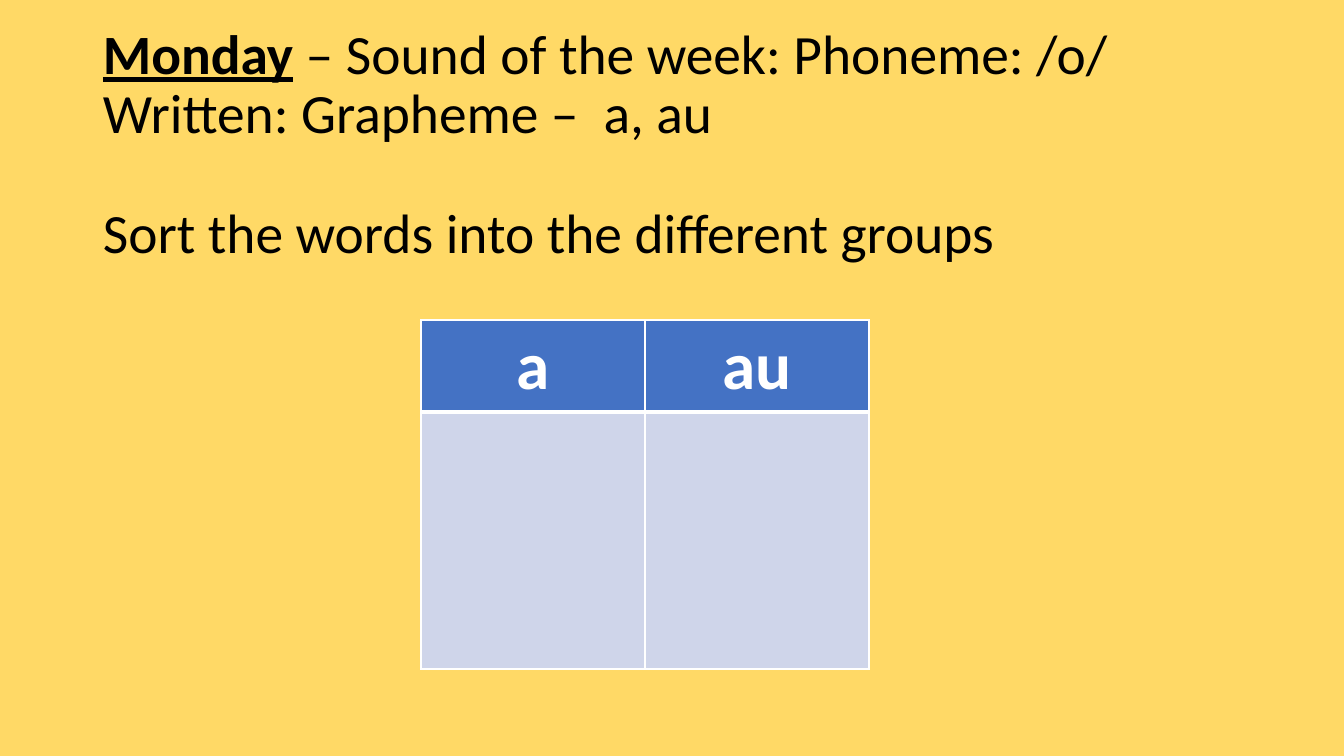
from lxml import etree
from pptx import Presentation, util as u
from pptx.dml.color import RGBColor
from pptx.enum import text
from pptx.oxml.ns import qn

PX = 9525 / 1.05
FONT = "Calibri"
COLORS = {"background": "FFD966", "ink": "000000", "white": "FFFFFF",
          "header": "4472C4", "body": "CFD5EA"}
GRAPHEMES = ["a", "au"]
HEADER_HEIGHT = 92


def px(length):
    """Turn px into EMU."""
    return u.Emu(round(length * PX))


def rgb(name):
    """Look up a named colour."""
    return RGBColor.from_string(COLORS[name])


def style_font(font, size, color, bold=False):
    """Set the face, size, colour and weight of a font."""
    font.name, font.size, font.bold = FONT, u.Pt(size), bold
    font.color.rgb = rgb(color)


def add_instructions(slide, left, top, width, height):
    """Place the phoneme heading and the task, centred vertically in the box."""
    frame = slide.shapes.add_textbox(*map(px, (left, top, width, height))).text_frame
    frame.word_wrap = True
    frame.vertical_anchor = text.MSO_ANCHOR.MIDDLE
    heading, task = frame.paragraphs[0], frame.add_paragraph()
    heading.text = "Monday"
    heading.add_run().text = " – Sound of the week: Phoneme: /o/"
    heading.add_line_break()
    heading.add_run().text = "Written: Grapheme –  a, au"
    heading.space_after = u.Pt(43)
    task.text = "Sort the words into the different groups"
    for paragraph in (heading, task):
        paragraph.line_spacing = 0.9
        style_font(paragraph.font, 39.6, "ink")
        for run in paragraph.runs:
            style_font(run.font, 39.6, "ink")
    day = heading.runs[0].font
    day.bold = day.underline = True


def style_cell(cell, fill, top_line, bottom_line):
    """Give a cell its fill and white borders."""
    properties = cell._tc.get_or_add_tcPr()
    for side, points in zip("LRTB", (1, 1, top_line, bottom_line)):
        line = etree.SubElement(properties, qn(f"a:ln{side}"), w=str(u.Pt(points)))
        solid = etree.SubElement(line, qn("a:solidFill"))
        etree.SubElement(solid, qn("a:srgbClr"), val=COLORS["white"])
    cell.fill.solid()
    cell.fill.fore_color.rgb = rgb(fill)


def add_sorting_table(slide, left, top, width, height):
    """Place a table with one empty column under each grapheme."""
    table = slide.shapes.add_table(
        2, len(GRAPHEMES), *map(px, (left, top, width, height))).table
    table.rows[0].height = px(HEADER_HEIGHT)
    table.rows[1].height = px(height - HEADER_HEIGHT)
    for column, grapheme in enumerate(GRAPHEMES):
        header = table.cell(0, column)
        header.text = grapheme
        label = header.text_frame.paragraphs[0]
        label.alignment = text.PP_ALIGN.CENTER
        style_font(label.runs[0].font, 48, "white", bold=True)
        style_cell(header, "header", 1, 3)
        style_cell(table.cell(1, column), "body", 3, 1)


def main():
    """Build the slide and save it."""
    deck = Presentation()
    deck.slide_width, deck.slide_height = px(1344), px(756)
    slide = deck.slides.add_slide(deck.slide_layouts[6])
    slide.background.fill.solid()
    slide.background.fill.fore_color.rgb = rgb("background")
    add_instructions(slide, 93, 73, 1159, 146)
    add_sorting_table(slide, 421, 320, 448, 349)
    deck.save("out.pptx")


if __name__ == "__main__":
    main()
